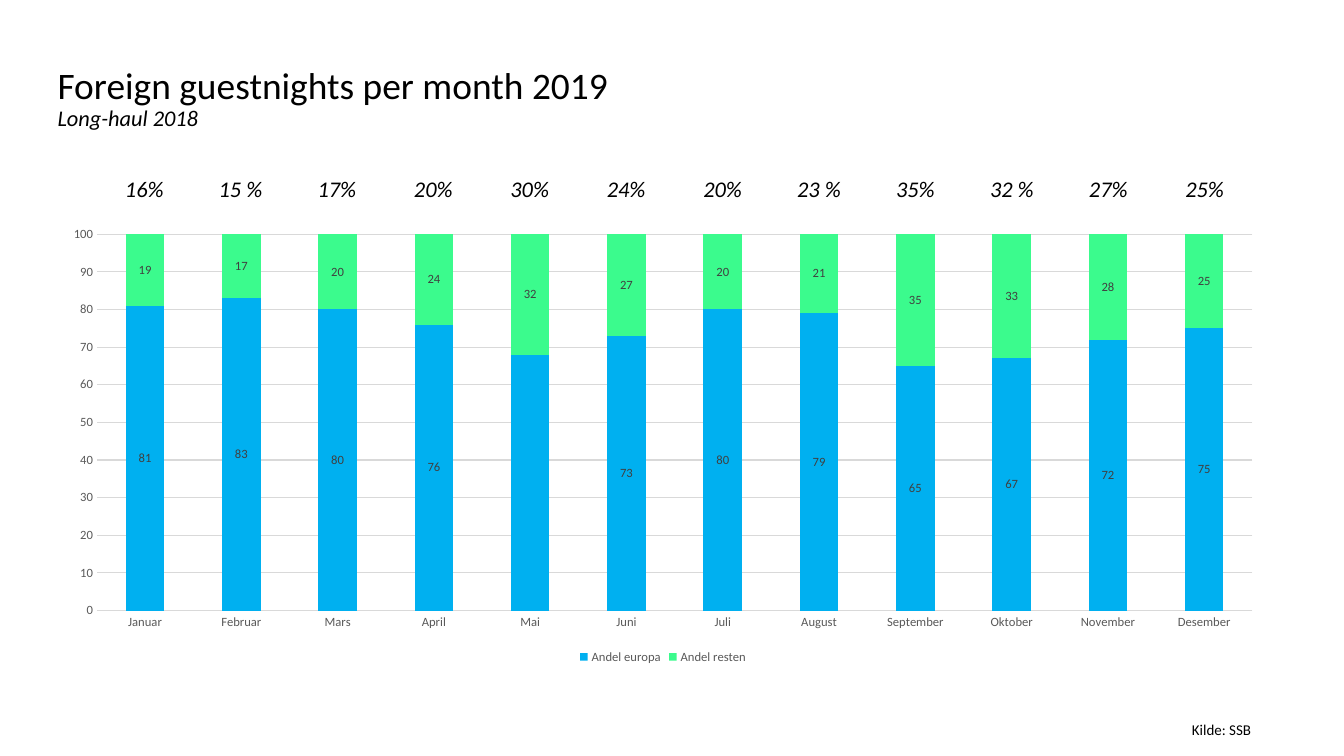
from lxml import etree
from pptx import Presentation
from pptx.chart.data import CategoryChartData
from pptx.dml.color import RGBColor
from pptx.enum.chart import XL_CHART_TYPE, XL_LEGEND_POSITION, XL_TICK_MARK
from pptx.enum.text import MSO_ANCHOR, PP_ALIGN
from pptx.oxml.ns import qn
from pptx.util import Cm, Pt

STACKED = XL_CHART_TYPE.COLUMN_STACKED
BOTTOM = XL_LEGEND_POSITION.BOTTOM
NO_TICK = XL_TICK_MARK.NONE
MIDDLE = MSO_ANCHOR.MIDDLE
LEFT = PP_ALIGN.LEFT

BLACK = RGBColor(0x00, 0x00, 0x00)
WHITE = RGBColor(0xFF, 0xFF, 0xFF)
GRID_GREY = RGBColor(0xD9, 0xD9, 0xD9)
AXIS_GREY = RGBColor(0x59, 0x59, 0x59)
LABEL_GREY = RGBColor(0x40, 0x40, 0x40)
EUROPE_BLUE = RGBColor(0x00, 0xB0, 0xF0)
REST_GREEN = RGBColor(0x3B, 0xFB, 0x8D)

FONT = "Calibri"
MONTHS = ["Januar", "Februar", "Mars", "April", "Mai", "Juni", "Juli",
          "August", "September", "Oktober", "November", "Desember"]
EUROPE = [81, 83, 80, 76, 68, 73, 80, 79, 65, 67, 72, 75]
REST = [19, 17, 20, 24, 32, 27, 20, 21, 35, 33, 28, 25]
LONG_HAUL_2018 = ["16%", "15 %", "17%", "20%", "30%", "24%", "20%",
                  "23 %", "35%", "32 %", "27%", "25%"]
UNLABELLED_MONTH = MONTHS.index("Mai")
FIRST_MONTH_CENTRE = 0.48
MONTH_PITCH = 2.43


def style_font(font, size, color, italic=False):
    font.name = FONT
    font.size = Pt(size)
    font.color.rgb = color
    font.italic = italic


def place_heading(slide, left, top, width, height):
    heading = slide.shapes.title
    heading.left, heading.top = Cm(left), Cm(top)
    heading.width, heading.height = Cm(width), Cm(height)
    heading.fill.solid()
    heading.fill.fore_color.rgb = WHITE
    frame = heading.text_frame
    frame.margin_left = frame.margin_right = 0
    frame.margin_top = frame.margin_bottom = 0
    frame.vertical_anchor = MIDDLE
    frame.word_wrap = True
    frame.text = "Foreign guestnights per month 2019 \vLong-haul 2018"
    paragraph = frame.paragraphs[0]
    paragraph.alignment = LEFT
    paragraph.line_spacing = 0.9
    headline, subtitle = paragraph.runs
    style_font(headline.font, 26.7, BLACK)
    style_font(subtitle.font, 16, BLACK, italic=True)


def place_text(slide, left, top, width, height, text, size, italic=False, wrap=True):
    box = slide.shapes.add_textbox(Cm(left), Cm(top), Cm(width), Cm(height))
    box.text_frame.word_wrap = wrap
    paragraph = box.text_frame.paragraphs[0]
    paragraph.text = text
    style_font(paragraph.runs[0].font, size, BLACK, italic)
    return paragraph


def place_long_haul_row(slide, left, top, width, height):
    row = place_text(slide, left, top, width, height,
                     "\t".join(LONG_HAUL_2018), 16, italic=True)
    row.alignment = LEFT
    stops = etree.SubElement(row._p.get_or_add_pPr(), qn("a:tabLst"))
    for month in range(1, len(MONTHS)):
        centre = Cm(FIRST_MONTH_CENTRE + month * MONTH_PITCH)
        etree.SubElement(stops, qn("a:tab"), pos=str(centre), algn="ctr")


def hide_label(series, index):
    label = etree.Element(qn("c:dLbl"))
    etree.SubElement(label, qn("c:idx"), val=str(index))
    etree.SubElement(label, qn("c:delete"), val="1")
    series.data_labels._element.insert(0, label)


def format_axes(chart):
    months, shares = chart.category_axis, chart.value_axis
    for axis in (months, shares):
        axis.major_tick_mark = NO_TICK
        axis.minor_tick_mark = NO_TICK
        style_font(axis.tick_labels.font, 9, AXIS_GREY)
    shares.minimum_scale = 0
    shares.maximum_scale = 100
    shares.major_unit = 10
    shares.tick_labels.number_format = "0"
    shares.tick_labels.number_format_is_linked = False
    shares.format.line.fill.background()
    for line in (months.format.line, shares.major_gridlines.format.line):
        line.color.rgb = GRID_GREY
        line.width = Pt(0.75)


def place_guestnight_chart(slide, left, top, width, height):
    data = CategoryChartData(number_format="0")
    data.categories = MONTHS
    data.add_series("Andel europa", EUROPE)
    data.add_series("Andel resten", REST)
    chart = slide.shapes.add_chart(
        STACKED, Cm(left), Cm(top), Cm(width), Cm(height), data).chart
    style_font(chart.font, 10, BLACK)
    chart.has_title = False
    chart.has_legend = True
    chart.legend.position = BOTTOM
    chart.legend.include_in_layout = False
    style_font(chart.legend.font, 9, AXIS_GREY)
    format_axes(chart)
    plot = chart.plots[0]
    plot.gap_width = 150
    plot.overlap = 100
    plot.vary_by_categories = False
    for series, color in zip(plot.series, (EUROPE_BLUE, REST_GREEN)):
        series.format.fill.solid()
        series.format.fill.fore_color.rgb = color
        labels = series.data_labels
        labels.show_value = True
        labels.number_format = "0"
        labels.number_format_is_linked = False
        style_font(labels.font, 9, LABEL_GREY)
    hide_label(plot.series[0], UNLABELLED_MONTH)


def main():
    deck = Presentation()
    deck.slide_width, deck.slide_height = Cm(33.87), Cm(19.05)
    title_only = deck.slide_layouts[5]
    slide = deck.slides.add_slide(title_only)
    place_heading(slide, 1.45, 1.68, 30.96, 1.65)
    place_guestnight_chart(slide, 1.24, 5.49, 30.94, 11.35)
    place_text(slide, 29.79, 18.03, 2.01, 0.71, "Kilde: SSB", 10.7, wrap=False)
    place_long_haul_row(slide, 2.9, 4.29, 29.29, 1.63)
    deck.save("out.pptx")


if __name__ == "__main__":
    main()
